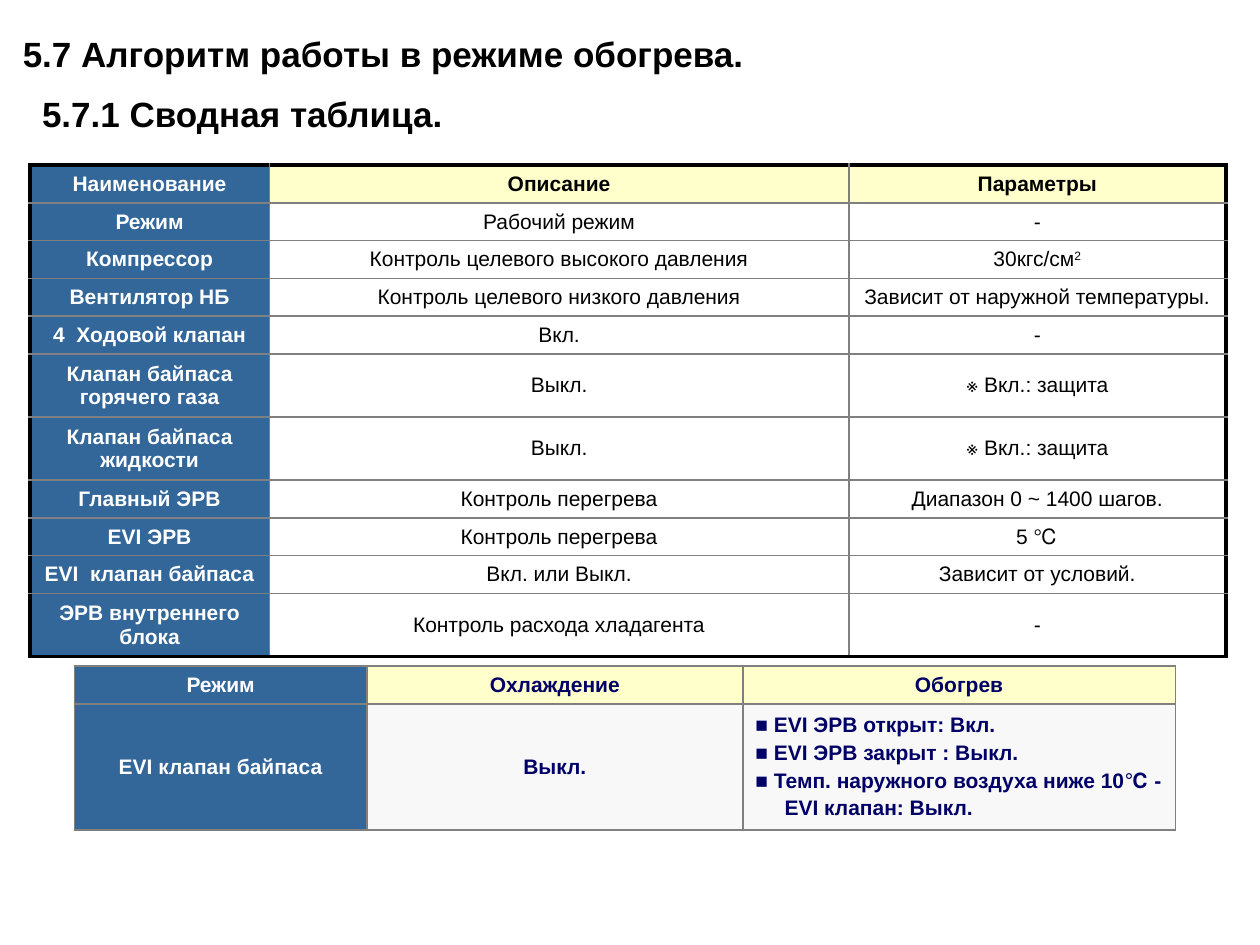
from lxml import etree
from pptx import Presentation
from pptx.dml.color import RGBColor
from pptx.enum.text import MSO_ANCHOR, MSO_AUTO_SIZE, PP_ALIGN
from pptx.oxml.ns import qn
from pptx.util import Pt

LEFT, CENTER = PP_ALIGN.LEFT, PP_ALIGN.CENTER
TOP, MIDDLE = MSO_ANCHOR.TOP, MSO_ANCHOR.MIDDLE
NO_FIT = MSO_AUTO_SIZE.NONE

BLACK = RGBColor(0x00, 0x00, 0x00)
WHITE = RGBColor(0xFF, 0xFF, 0xFF)
GRAY = RGBColor(0x80, 0x80, 0x80)
BLUE = RGBColor(0x33, 0x66, 0x99)
CREAM = RGBColor(0xFF, 0xFF, 0xCC)
NAVY = RGBColor(0x00, 0x00, 0x66)
PALE = RGBColor(0xF8, 0xF8, 0xF8)

THIN, THICK = (GRAY, 1), (BLACK, 2.25)
ROW, TALL = 21.6, 36

HEADING = [("5.7 Алгоритм работы в режиме обогрева.", 0),
           ("5.7.1 Сводная таблица.", 11)]

# A "^" starts a superscript.
SUMMARY = [
    ("Наименование", "Описание", "Параметры"),
    ("Режим", "Рабочий режим", "-"),
    ("Компрессор", "Контроль целевого высокого давления", "30кгс/см^2"),
    ("Вентилятор НБ", "Контроль целевого низкого давления",
     "Зависит от наружной температуры."),
    ("4  Ходовой клапан", "Вкл.", "-"),
    ("Клапан байпаса горячего газа", "Выкл.", "※ Вкл.: защита"),
    ("Клапан байпаса жидкости", "Выкл.", "※ Вкл.: защита"),
    ("Главный ЭРВ", "Контроль перегрева", "Диапазон 0 ~ 1400 шагов."),
    ("EVI ЭРВ", "Контроль перегрева", "5 ℃"),
    ("EVI  клапан байпаса", "Вкл. или Выкл.", "Зависит от условий."),
    ("ЭРВ внутреннего блока", "Контроль расхода хладагента", "-"),
]
TALL_ROWS = (5, 6, 10)

VALVE = [("Режим", "Охлаждение", "Обогрев"),
         ("EVI клапан байпаса", "Выкл.", "")]
RULES = [("■ EVI ЭРВ открыт: Вкл.", 0),
         ("■ EVI ЭРВ закрыт : Выкл.", 0),
         ("■ Темп. наружного воздуха ниже 10℃ -", 0),
         ("EVI клапан: Выкл.", 16.7)]


def set_all(item, form):
    for name, value in form.items():
        setattr(item, name, value)


def write(frame, lines, size, color, bold, align, gap):
    """Fill a text frame with (text, indent) paragraphs."""
    for i, (text, indent) in enumerate(lines):
        para = frame.paragraphs[0] if i == 0 else frame.add_paragraph()
        set_all(para, {"alignment": align, "space_before": Pt(gap)})
        if indent:
            props = para._p.get_or_add_pPr()
            props.set("marL", str(Pt(indent)))
            props.set("indent", "0")
        for j, part in enumerate(text.split("^")):
            run = para.add_run()
            run.text = part
            set_all(run.font, {"name": "Arial", "size": Pt(size), "bold": bold})
            run.font.color.rgb = color
            if j:
                run._r.get_or_add_rPr().set("baseline", "30000")


def add_edge(cell, side, edge):
    color, width = edge
    line = etree.SubElement(cell._tc.get_or_add_tcPr(), qn("a:ln" + side),
                            w=str(Pt(width)))
    fill = etree.SubElement(line, qn("a:solidFill"))
    etree.SubElement(fill, qn("a:srgbClr"), val=str(color))


def style_cell(cell, edges, fill):
    """Draw the edges first: the schema wants them ahead of the fill."""
    for side in "LRTB":
        add_edge(cell, side, edges[side])
    if fill is None:
        cell.fill.background()
    else:
        cell.fill.solid()
        cell.fill.fore_color.rgb = fill
    cell.vertical_anchor = MIDDLE


def add_grid(slide, left, top, widths, heights, rim):
    """Add a plain table whose outer edges use rim."""
    rows, cols = len(heights), len(widths)
    table = slide.shapes.add_table(rows, cols, Pt(left), Pt(top),
                                   Pt(sum(widths)), Pt(sum(heights))).table
    set_all(table, {"first_row": False, "horz_banding": False})
    for col, width in zip(table.columns, widths):
        col.width = Pt(width)
    for row, height in zip(table.rows, heights):
        row.height = Pt(height)

    def edges(r, c):
        outer = {"L": c == 0, "R": c == cols - 1,
                 "T": r == 0, "B": r == rows - 1}
        return {side: rim if out else THIN for side, out in outer.items()}
    return table, edges


def fill_grid(grid, data, ink, body, bold):
    """Write data with a blue first column and a cream header row."""
    table, edges = grid
    for r, row in enumerate(data):
        for c, text in enumerate(row):
            cell = table.cell(r, c)
            fill = BLUE if c == 0 else CREAM if r == 0 else body
            style_cell(cell, edges(r, c), fill)
            if text:
                write(cell.text_frame, [(text, 0)], 12,
                      WHITE if c == 0 else ink,
                      bold or r == 0 or c == 0, CENTER, 2.4)


def add_title(slide):
    title = slide.shapes.title
    set_all(title, {"left": Pt(5.8), "top": Pt(15.1),
                    "width": Pt(513.4), "height": Pt(67)})
    frame = title.text_frame
    set_all(frame, {"word_wrap": True, "auto_size": NO_FIT,
                    "vertical_anchor": TOP})
    write(frame, HEADING, 20, BLACK, True, LEFT, 10)


def main():
    deck = Presentation()
    set_all(deck, {"slide_width": Pt(720), "slide_height": Pt(540)})
    slide = deck.slides.add_slide(deck.slide_layouts[5])

    heights = [TALL if r in TALL_ROWS else ROW for r in range(len(SUMMARY))]
    summary = add_grid(slide, 17.1, 94.3, (136.8, 331.2, 215.4), heights, THICK)
    fill_grid(summary, SUMMARY, BLACK, None, False)

    valve = add_grid(slide, 42.5, 380.7, (167.2, 214.8, 247.2), (ROW, 72), THIN)
    fill_grid(valve, VALVE, NAVY, PALE, True)
    write(valve[0].cell(1, 2).text_frame, RULES, 12, NAVY, True, LEFT, 2.4)

    add_title(slide)
    deck.save("out.pptx")


if __name__ == "__main__":
    main()
